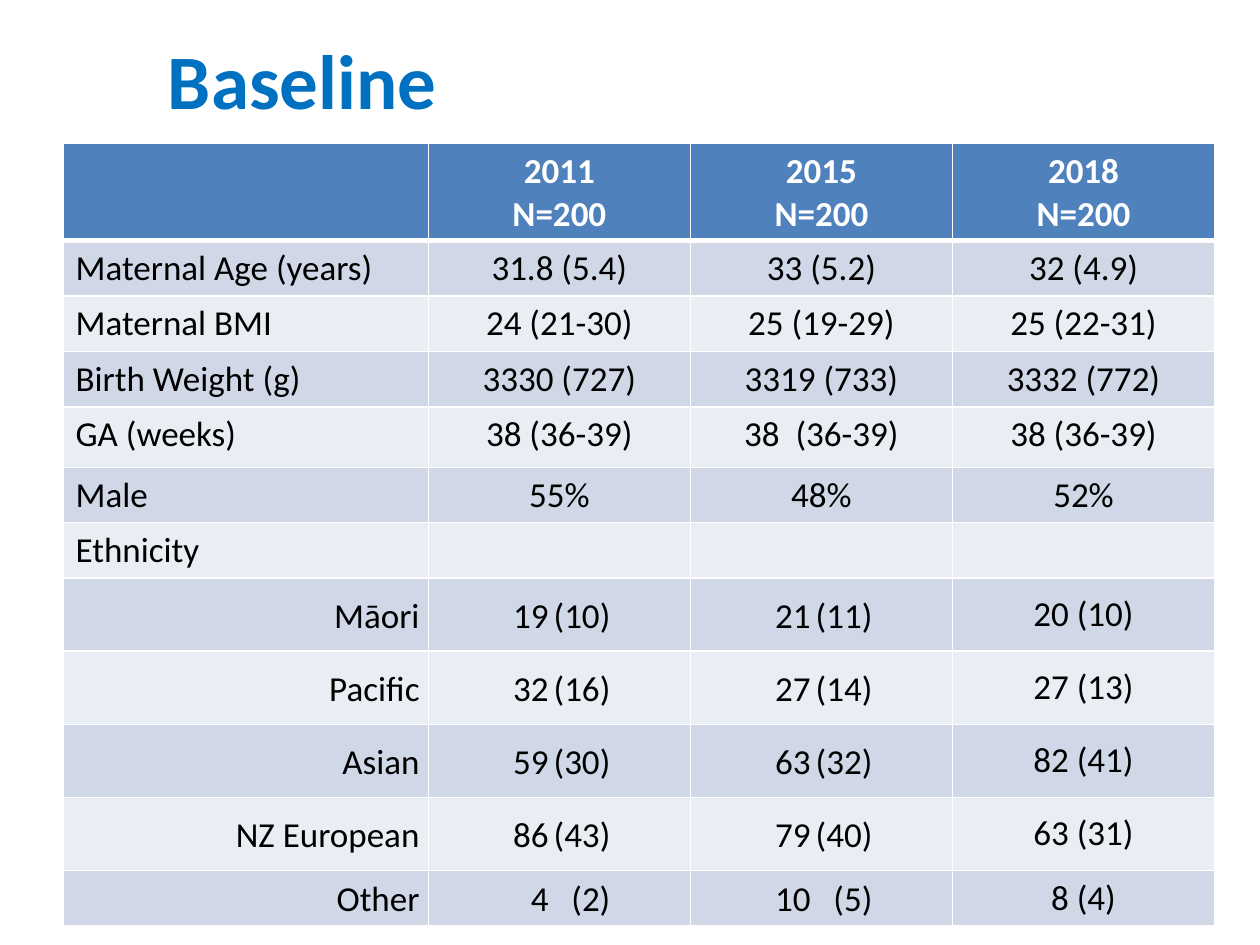
from lxml import etree
from pptx import Presentation
from pptx.dml.color import RGBColor
from pptx.enum.text import MSO_ANCHOR, PP_ALIGN
from pptx.oxml.ns import qn
from pptx.util import Inches, Pt

LEFT, CENTER, RIGHT = PP_ALIGN.LEFT, PP_ALIGN.CENTER, PP_ALIGN.RIGHT
TOP, MIDDLE = MSO_ANCHOR.TOP, MSO_ANCHOR.MIDDLE

FONT = "Calibri"
TITLE_BLUE = RGBColor(0x00, 0x70, 0xC0)
HEADER_BLUE = RGBColor(0x4F, 0x81, 0xBD)
BAND_DARK = RGBColor(0xD0, 0xD8, 0xE8)
BAND_LIGHT = RGBColor(0xE9, 0xED, 0xF4)
WHITE = RGBColor(0xFF, 0xFF, 0xFF)
BLACK = RGBColor(0x00, 0x00, 0x00)

YEARS = ["2011", "2015", "2018"]
MEASURES = [
    ["Maternal Age (years)", "31.8 (5.4)", "33 (5.2)", "32 (4.9)"],
    ["Maternal BMI", "24 (21-30)", "25 (19-29)", "25 (22-31)"],
    ["Birth Weight (g)", "3330 (727)", "3319 (733)", "3332 (772)"],
    ["GA (weeks)", "38 (36-39)", "38  (36-39)", "38 (36-39)"],
    ["Male", "55%", "48%", "52%"],
    ["Ethnicity", "", "", ""],
]
# Count and percentage for each year
ETHNICITIES = [
    ["Māori", (19, 10), (21, 11), (20, 10)],
    ["Pacific", (32, 16), (27, 14), (27, 13)],
    ["Asian", (59, 30), (63, 32), (82, 41)],
    ["NZ European", (86, 43), (79, 40), (63, 31)],
    ["Other", (4, 2), (10, 5), (8, 4)],
]
COL_WIDTHS = [2.9] + [2.08] * 3
ROW_HEIGHTS = [0.77] + [0.44] * 3 + [0.48] + [0.44] * 2 + [0.58] * 4 + [0.44]
COUNT_TABS = [0.32, 0.81]


def add_run(p, text, size, color, bold=False):
    r = p.add_run()
    r.text = text
    r.font.name = FONT
    r.font.size = Pt(size)
    r.font.bold = bold
    r.font.color.rgb = color


def add_title(slide, text):
    box = slide.shapes.add_textbox(Inches(-2.1), Inches(0.21), Inches(9), Inches(1.25))
    tf = box.text_frame
    tf.word_wrap = True
    tf.vertical_anchor = TOP
    p = tf.paragraphs[0]
    p.alignment = CENTER
    add_run(p, text, 44, TITLE_BLUE, bold=True)


def set_borders(cell, top, bottom):
    tcPr = cell._tc.get_or_add_tcPr()
    widths = {"a:lnL": 1, "a:lnR": 1, "a:lnT": top, "a:lnB": bottom}
    for tag, width in widths.items():
        ln = etree.SubElement(tcPr, qn(tag), w=str(Pt(width)))
        fill = etree.SubElement(ln, qn("a:solidFill"))
        etree.SubElement(fill, qn("a:srgbClr"), val=str(WHITE))


def style_cell(cell, row):
    set_borders(cell, 3 if row == 1 else 1, 3 if row == 0 else 1)
    cell.fill.solid()
    band = BAND_DARK if row % 2 else BAND_LIGHT
    cell.fill.fore_color.rgb = band if row else HEADER_BLUE


def write_cell(cell, lines, align, color=BLACK, bold=False):
    tf = cell.text_frame
    for i, line in enumerate(lines):
        p = tf.add_paragraph() if i else tf.paragraphs[0]
        p.alignment = align
        if line:
            add_run(p, line, 20, color, bold)
    return tf.paragraphs[0]


def tighten(cell, p):
    """Compact layout of the ethnicity cells."""
    cell.margin_left = cell.margin_right = Inches(0.07)
    cell.margin_top = cell.margin_bottom = 0
    p.line_spacing = 1.07


def write_ethnicity(cells, label, counts):
    # Indented group name
    p = write_cell(cells[0], [label], RIGHT)
    p._p.get_or_add_pPr().set("marL", str(Inches(0.1)))
    tighten(cells[0], p)
    # Counts aligned on right tabs
    for cell, (n, percent) in zip(cells[1:3], counts):
        p = write_cell(cell, [f"\t{n}\t({percent})"], CENTER)
        tighten(cell, p)
        tabs = etree.SubElement(p._p.get_or_add_pPr(), qn("a:tabLst"))
        for pos in COUNT_TABS:
            etree.SubElement(tabs, qn("a:tab"), pos=str(Inches(pos)), algn="r")
    # Last year is plain centred text
    n, percent = counts[2]
    write_cell(cells[3], [f"{n} ({percent})"], CENTER)
    for cell in cells:
        cell.vertical_anchor = MIDDLE


def add_baseline_table(slide):
    frame = slide.shapes.add_table(
        len(ROW_HEIGHTS), len(COL_WIDTHS), Inches(0.5), Inches(1.14),
        Inches(sum(COL_WIDTHS)), Inches(sum(ROW_HEIGHTS)))
    table = frame.table
    for col, width in zip(table.columns, COL_WIDTHS):
        col.width = Inches(width)
    for i, (row, height) in enumerate(zip(table.rows, ROW_HEIGHTS)):
        row.height = Inches(height)
        for cell in row.cells:
            style_cell(cell, i)

    rows = [list(row.cells) for row in table.rows]
    # Header
    for cell, year in zip(rows[0][1:], YEARS):
        write_cell(cell, [year, "N=200"], CENTER, WHITE, bold=True)
    # Measures
    for cells, values in zip(rows[1:], MEASURES):
        for j, (cell, value) in enumerate(zip(cells, values)):
            write_cell(cell, [value], CENTER if j else LEFT)
    # Ethnic groups
    for cells, (label, *counts) in zip(rows[1 + len(MEASURES):], ETHNICITIES):
        write_ethnicity(cells, label, counts)
    rows[-1][3].vertical_anchor = TOP


def main():
    prs = Presentation()
    prs.slide_width, prs.slide_height = Inches(10), Inches(7.5)
    slide = prs.slides.add_slide(prs.slide_layouts[6])
    add_title(slide, "Baseline")
    add_baseline_table(slide)
    prs.save("out.pptx")


if __name__ == "__main__":
    main()
